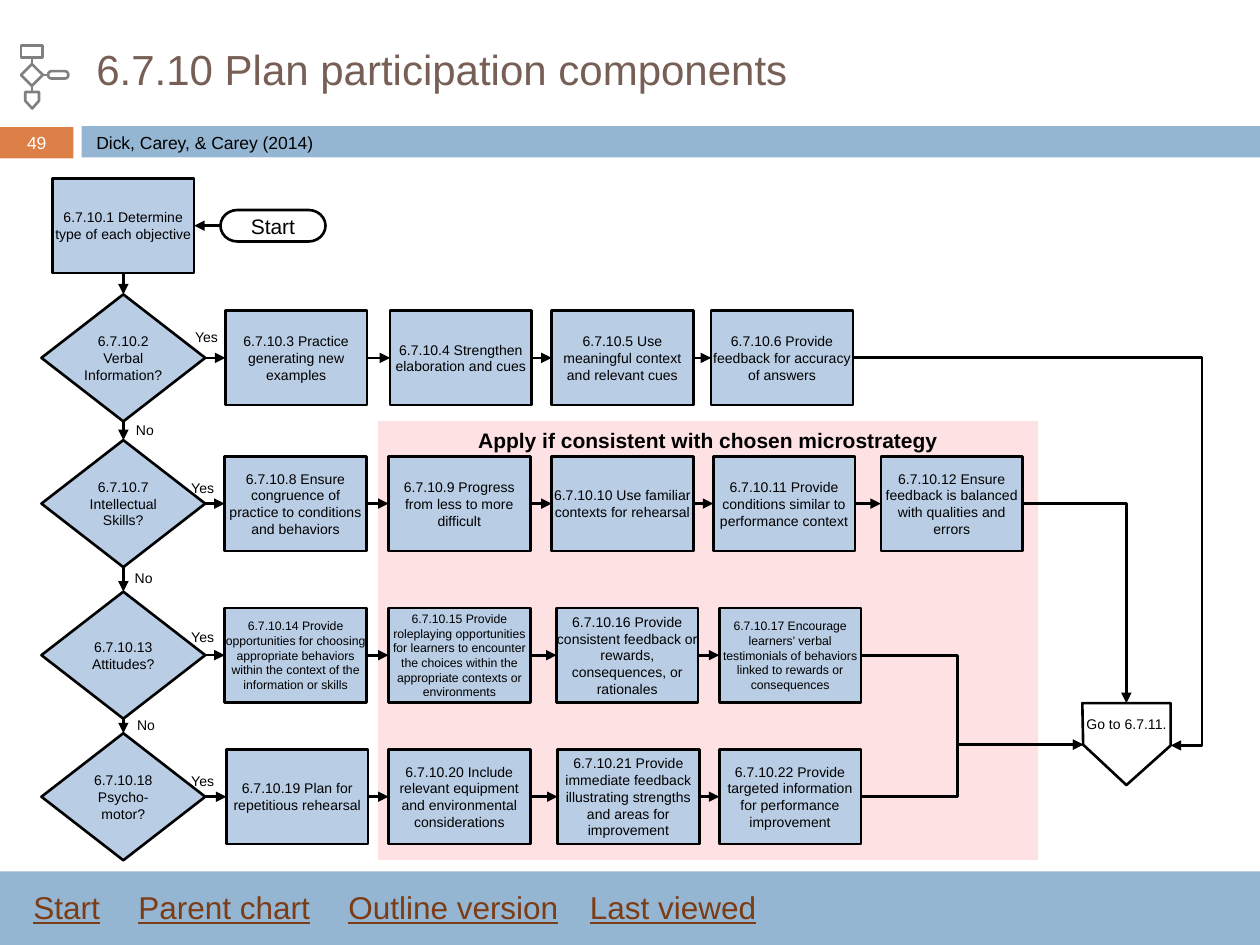
from lxml import etree
from pptx import Presentation
from pptx import util as u
from pptx.dml.color import RGBColor
from pptx.enum import shapes, text
from pptx.oxml.ns import qn

THEME = {
    "font": "Arial", "black": "000000", "white": "FFFFFF", "blue": "94B6D2",
    "step": "B9CDE5", "orange": "DD8047", "panel": "FEE2E3", "gray": "808080",
    "title": "775F55", "link": "7B3C16", "stroke": 1.5,
    "title_size": 24, "link_size": 18, "heading_size": 12, "caption_size": 10,
    "step_size": 8, "dense_size": 7,
}

TITLE = "6.7.10 Plan participation components"
CITATION = "Dick, Carey, & Carey (2014)"
PAGE = "49"
PANEL = "Apply if consistent with chosen microstrategy"
FIRST_STEP = "6.7.10.1 Determine type of each objective"
EXIT = "Go to 6.7.11."
NAVIGATION = [("Start", 12, 56), ("Parent chart", 72, 118),
              ("Outline version", 192, 138), ("Last viewed", 330, 118)]

DENSE = {"6.7.10.14", "6.7.10.15", "6.7.10.17"}
BRANCHES = [
    {"middle": 204.5, "question": "6.7.10.2 Verbal Information?", "yes": (104.4, 184.3),
     "steps": [(128.8, "6.7.10.3 Practice generating new examples"),
               (222.9, "6.7.10.4 Strengthen elaboration and cues"),
               (315.2, "6.7.10.5 Use meaningful context and relevant cues"),
               (406.4, "6.7.10.6 Provide feedback for accuracy of answers")]},
    {"middle": 287.8, "question": "6.7.10.7 Intellectual Skills?", "yes": (102.2, 270.7),
     "steps": [(128.4, "6.7.10.8 Ensure congruence of practice to conditions and behaviors"),
               (222, "6.7.10.9 Progress from less to more difficult"),
               (315.2, "6.7.10.10 Use familiar contexts for rehearsal"),
               (407.6, "6.7.10.11 Provide conditions similar to performance context"),
               (503.4, "6.7.10.12 Ensure feedback is balanced with qualities and errors")]},
    {"middle": 374.4, "question": "6.7.10.13 Attitudes?", "yes": (102.2, 355.7),
     "steps": [(128.4, "6.7.10.14 Provide opportunities for choosing appropriate behaviors "
                       "within the context of the information or skills"),
               (222, "6.7.10.15 Provide roleplaying opportunities for learners to encounter "
                     "the choices within the appropriate contexts or environments"),
               (318, "6.7.10.16 Provide consistent feedback or rewards, consequences, "
                     "or rationales"),
               (411, "6.7.10.17 Encourage learners’ verbal testimonials of behaviors "
                     "linked to rewards or consequences")]},
    {"middle": 455.3, "question": "6.7.10.18 Psycho-motor?", "yes": (102.2, 437.8),
     "steps": [(129.4, "6.7.10.19 Plan for repetitious rehearsal"),
               (222, "6.7.10.20 Include relevant equipment and environmental considerations"),
               (318.6, "6.7.10.21 Provide immediate feedback illustrating strengths and "
                       "areas for improvement"),
               (411, "6.7.10.22 Provide targeted information for performance improvement")]},
]
NO_LABELS = [(70.6, 237.6), (69.9, 321.8), (71.3, 406.1)]

STEP_W, STEP_H = 81, 54
QUESTION_X, QUESTION_W, QUESTION_H = 23.7, 93.6, 72.6
TOP, LEFT, BOTTOM, RIGHT = range(4)
KIND = shapes.MSO_SHAPE
EXIT_OUTLINE = [(618.5, 401.8), (669, 401.8), (669, 426), (643.7, 448.6), (619, 425.5)]
ICON_OUTLINE = [(14.4, 52.6), (22.3, 52.6), (22.3, 57.6), (18.4, 62), (14.4, 57.6)]

deck = Presentation()
deck.slide_width, deck.slide_height = u.Pt(720), u.Pt(540)
slide = deck.slides.add_slide(deck.slide_layouts[6])


def rgb(name):
    return RGBColor.from_string(THEME[name])


def write(shape, words, size="step_size", color="black", align="CENTER", anchor="MIDDLE",
          insets=(0, 0, 0, 0), bold=False, underline=False):
    frame = shape.text_frame
    frame.word_wrap = True
    frame.vertical_anchor = text.MSO_ANCHOR[anchor]
    frame.margin_left, frame.margin_top, frame.margin_right, frame.margin_bottom = map(u.Pt, insets)
    paragraph = frame.paragraphs[0]
    paragraph.alignment = text.PP_ALIGN[align]
    run = paragraph.add_run()
    run.text = words
    run.font.name, run.font.size = THEME["font"], u.Pt(THEME[size])
    run.font.bold, run.font.underline = bold, underline
    run.font.color.rgb = rgb(color)


def paint(shape, fill, line=None):
    shape.shadow.inherit = False
    shape.fill.solid()
    shape.fill.fore_color.rgb = rgb(fill)
    if line:
        shape.line.color.rgb = rgb(line)
        shape.line.width = u.Pt(THEME["stroke"])
    else:
        shape.line.fill.background()
    return shape


def block(kind, box, fill, line=None):
    return paint(slide.shapes.add_shape(kind, *map(u.Pt, box)), fill, line)


def outline(points, line):
    start, *rest = [(u.Pt(x), u.Pt(y)) for x, y in points]
    builder = slide.shapes.build_freeform(*start, scale=1.0)
    builder.add_line_segments(rest, close=True)
    return paint(builder.convert_to_shape(), "white", line)


def label(words, box, **formats):
    options = {"align": "LEFT", "anchor": "TOP", "insets": (7.2, 3.6, 7.2, 3.6)}
    write(slide.shapes.add_textbox(*map(u.Pt, box)), words, **{**options, **formats})


def connector(start, end, kind="STRAIGHT", line="black", arrow=True):
    link = slide.shapes.add_connector(shapes.MSO_CONNECTOR[kind], *map(u.Pt, (*start, *end)))
    link.line.color.rgb = rgb(line)
    link.line.width = u.Pt(THEME["stroke"])
    properties = link._element.spPr
    if arrow:
        etree.SubElement(properties.find(qn("a:ln")), qn("a:tailEnd"), type="triangle")
    etree.SubElement(properties, qn("a:effectLst"))
    return link


def join(source, source_side, target, target_side):
    link = connector((0, 0), (0, 0))
    link.begin_connect(source, source_side)
    link.end_connect(target, target_side)


def elbow(source, end, bend=None):
    start = ((source.left + source.width) / u.Pt(1), (source.top + source.height / 2) / u.Pt(1))
    geometry = connector(start, end, "ELBOW")._element.spPr.find(qn("a:prstGeom"))
    if bend is None:
        geometry.set("prst", "bentConnector2")
    else:
        share = round((bend - start[0]) / (end[0] - start[0]) * 100000)
        etree.SubElement(geometry.find(qn("a:avLst")), qn("a:gd"),
                         name="adj1", fmla=f"val {share}")


def step(words, left, middle):
    shape = block(KIND.RECTANGLE, (left, middle - STEP_H / 2, STEP_W, STEP_H), "step", "black")
    write(shape, words, size="dense_size" if words.split()[0] in DENSE else "step_size")
    return shape


def draw_frame():
    page = block(KIND.RECTANGLE, (0, 72.6, 42, 18), "orange")
    write(page, PAGE, size="caption_size", color="white")
    block(KIND.RECTANGLE, (46.6, 72, 673.4, 18), "blue")
    block(KIND.RECTANGLE, (0, 498, 720, 42), "blue")
    block(KIND.RECTANGLE, (12, 26, 12.5, 7), "white", "gray")
    block(KIND.DIAMOND, (12, 36.6, 12.5, 12.5), "white", "gray")
    block(KIND.FLOWCHART_TERMINATOR, (27.5, 40.7, 11.6, 4.2), "white", "gray")
    outline(ICON_OUTLINE, "gray")
    for start, end in [((18.3, 33), (18.3, 36.6)), ((18.3, 49.1), (18.3, 52.6)),
                       ((24.5, 42.8), (27.5, 42.8))]:
        connector(start, end, line="gray", arrow=False)
    label(TITLE, (48, 5.8, 654, 67), size="title_size", color="title", anchor="MIDDLE")
    label(CITATION, (48, 72, 654, 19.4), size="caption_size", anchor="MIDDLE")
    for words, left, width in NAVIGATION:
        label(words, (left, 504, width, 29), size="link_size", color="link", underline=True,
              insets=(7.2, 3.6, 0, 3.6))


def draw_flow():
    panel = block(KIND.RECTANGLE, (216, 240.6, 377.2, 250.8), "panel")
    write(panel, PANEL, size="heading_size", anchor="TOP", insets=(7.2, 3.6, 7.2, 3.6), bold=True)
    first = step(FIRST_STEP, 30, 129)
    begin = block(KIND.FLOWCHART_TERMINATOR, (126, 120, 60, 18), "white", "black")
    write(begin, "Start", size="heading_size")
    join(begin, LEFT, first, RIGHT)

    above, last_steps = first, []
    for branch in BRANCHES:
        middle = branch["middle"]
        question = block(KIND.DIAMOND, (QUESTION_X, middle - QUESTION_H / 2,
                                        QUESTION_W, QUESTION_H), "step", "black")
        write(question, branch["question"])
        join(above, BOTTOM, question, TOP)
        above = previous = question
        for left, words in branch["steps"]:
            current = step(words, left, middle)
            join(previous, RIGHT, current, LEFT)
            previous = current
        last_steps.append(previous)
        label("Yes", (*branch["yes"], 31.7, 17.3))
    for place in NO_LABELS:
        label("No", (*place, 31.7, 17.3))

    write(outline(EXIT_OUTLINE, "black"), EXIT, anchor="TOP", insets=(0, 7.2, 0, 0))
    verbal, intellectual, attitudes, motor = last_steps
    elbow(verbal, EXIT_OUTLINE[2], bend=687)
    elbow(intellectual, (643.7, EXIT_OUTLINE[0][1]))
    for source in (attitudes, motor):
        elbow(source, EXIT_OUTLINE[4], bend=547.2)


draw_frame()
draw_flow()
deck.save("out.pptx")
